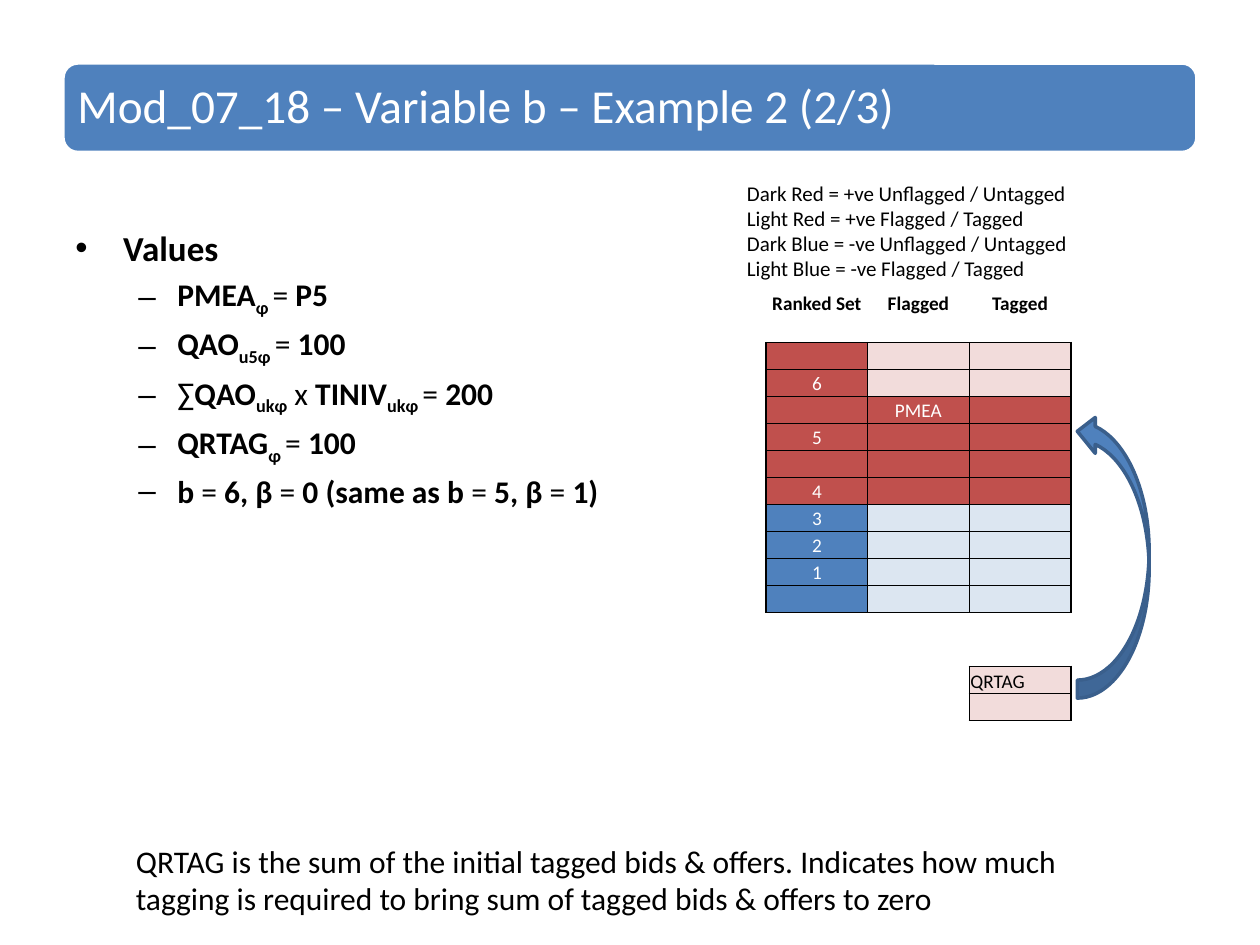
"""Build the slide on variable b, example 2."""
from dataclasses import dataclass
from typing import NamedTuple

from lxml.etree import SubElement
from pptx import Presentation
from pptx.dml.color import RGBColor
from pptx.enum.shapes import MSO_SHAPE
from pptx.enum.text import MSO_ANCHOR, PP_ALIGN
from pptx.oxml.ns import qn
from pptx.util import Inches, Pt

ROUND = MSO_SHAPE.ROUNDED_RECTANGLE
CURVE = MSO_SHAPE.CURVED_RIGHT_ARROW
MIDDLE, BOTTOM = MSO_ANCHOR.MIDDLE, MSO_ANCHOR.BOTTOM
LEFT, CENTER = PP_ALIGN.LEFT, PP_ALIGN.CENTER
PLAIN_STYLE = "{2D5ABB26-0587-4C30-8999-92F81FD0307C}"


@dataclass(frozen=True)
class Theme:
    font: str = "Calibri"
    black: str = "000000"
    white: str = "FFFFFF"
    red: str = "C0504D"
    pink: str = "F2DCDB"
    blue: str = "4F81BD"
    pale: str = "DCE6F1"
    edge: str = "3A5F8C"
    title: int = 27
    head: int = 20
    body: int = 18
    key: int = 12
    cell: int = 11


class Seg(NamedTuple):
    text: str
    bold: bool = True
    sub: bool = False


class Line(NamedTuple):
    mark: str
    size: int
    margin: float
    hang: float
    segs: list[Seg]


class Band(NamedTuple):
    top: int
    end: int
    col: int
    fills: list[str]


class Label(NamedTuple):
    row: int
    col: int
    text: str
    color: str
    bold: bool = False
    align: PP_ALIGN = CENTER
    anchor: MSO_ANCHOR = MIDDLE


T = Theme()
EQUAL = Seg("=", bold=False)
PHI = Seg("φ ", sub=True)


def item(*segs: Seg) -> Line:
    return Line("–", T.body, 0.81, 0.31, list(segs))


LINES = [
    Line("•", T.head, 0.38, 0.38, [Seg("Values")]),
    item(Seg("PMEA"), PHI, EQUAL, Seg(" P5")),
    item(Seg("QAO"), Seg("u5φ ", sub=True), EQUAL, Seg(" 100")),
    item(Seg("∑", bold=False), Seg("QAO"), Seg("ukφ", sub=True), Seg(" x ", bold=False),
         Seg("TINIV"), Seg("ukφ ", sub=True), EQUAL, Seg(" 200")),
    item(Seg("QRTAG"), PHI, EQUAL, Seg(" 100")),
    item(Seg("b "), EQUAL, Seg(" 6, β "), EQUAL, Seg(" 0 (same as b "), EQUAL,
         Seg(" 5, β "), EQUAL, Seg(" 1)")),
]
KEY = """Dark Red = +ve Unflagged / Untagged
Light Red = +ve Flagged / Tagged
Dark Blue = -ve Unflagged / Untagged
Light Blue = -ve Flagged / Tagged"""
NOTE = ("QRTAG is the sum of the initial tagged bids & offers. Indicates how much "
        "tagging is required to bring sum of tagged bids & offers to zero")

REDS, BLUES = [T.red] * 3, [T.blue, T.pale, T.pale]
BANDS = [
    Band(2, 3, 0, [T.red, T.pink, T.pink]),
    Band(4, 5, 0, REDS),
    Band(6, 7, 0, REDS),
    Band(8, 8, 0, BLUES),
    Band(9, 9, 0, BLUES),
    Band(10, 11, 0, BLUES),
    Band(14, 15, 2, [T.pink]),
]
HEADS = ["Ranked Set", "Flagged", "Tagged"]
RANKS = {3: "6", 5: "5", 7: "4", 8: "3", 9: "2", 10: "1"}
LABELS = [
    *(Label(0, col, text, T.black, True, anchor=BOTTOM) for col, text in enumerate(HEADS)),
    *(Label(row, 0, text, T.white) for row, text in RANKS.items()),
    Label(4, 1, "PMEA", T.white),
    Label(14, 2, "QRTAG", T.black, align=LEFT, anchor=BOTTOM),
]
ROWS, COLS = 18, 3


def rgb(code: str) -> RGBColor:
    return RGBColor.from_string(code)


def style(run, size: int, color: str, bold: bool = False) -> None:
    font = run.font
    font.name, font.size, font.bold = T.font, Pt(size), bold
    font.color.rgb = rgb(color)


def add_box(slide, spot: tuple, text: str, size: int):
    frame = slide.shapes.add_textbox(*map(Inches, spot)).text_frame
    frame.word_wrap = True
    frame.text = text
    for para in frame.paragraphs:
        for run in para.runs:
            style(run, size, T.black)
    return frame


def add_form(slide, kind: MSO_SHAPE, spot: tuple, line: str):
    form = slide.shapes.add_shape(kind, *map(Inches, spot))
    form.shadow.inherit = False
    form.fill.solid()
    form.fill.fore_color.rgb = rgb(T.blue)
    form.line.color.rgb = rgb(line)
    form.line.width = Pt(2)
    return form


def add_title(slide) -> None:
    frame = add_form(slide, ROUND, (0.5, 0.5, 9, 0.71), T.white).text_frame
    frame.margin_left = Inches(0.08)
    frame.vertical_anchor = MIDDLE
    frame.text = "Mod_07_18 – Variable b – Example 2 (2/3)"
    para = frame.paragraphs[0]
    para.alignment, para.line_spacing = LEFT, 0.9
    style(para.runs[0], T.title, T.white)


def add_list(slide) -> None:
    frame = add_box(slide, (0.5, 1.75, 5.6, 4.95), "", T.body)
    for num, line in enumerate(LINES):
        para = frame.add_paragraph() if num else frame.paragraphs[0]
        para.space_before = Pt(line.size * 0.2)
        props = para._p.get_or_add_pPr()
        props.set("marL", str(Inches(line.margin)))
        props.set("indent", str(-Inches(line.hang)))
        SubElement(props, qn("a:buFont"), typeface="Arial")
        SubElement(props, qn("a:buChar"), char=line.mark)
        for seg in line.segs:
            run = para.add_run()
            run.text = seg.text
            style(run, line.size, T.black, seg.bold)
            if seg.sub:
                run._r.get_or_add_rPr().set("baseline", "-25000")


def add_edges(cell, sides: str) -> None:
    props = cell._tc.get_or_add_tcPr()
    for spot, side in enumerate(sides):
        line = SubElement(props, qn(f"a:ln{side}"), w=str(Pt(1)))
        fill = SubElement(line, qn("a:solidFill"))
        SubElement(fill, qn("a:srgbClr"), val=T.black)
        props.insert(spot, line)


def add_grid(slide) -> None:
    spot = map(Inches, (6.08, 2.29, 2.42, 3.86))
    table = slide.shapes.add_table(ROWS, COLS, *spot).table
    table.first_row = table.horz_banding = False
    table._tbl.tblPr.find(qn("a:tableStyleId")).text = PLAIN_STYLE
    for cell in table.iter_cells():
        cell.margin_left = cell.margin_right = cell.margin_top = Inches(0.01)
        cell.margin_bottom = 0
        cell.fill.background()
        para = cell.text_frame.paragraphs[0]
        SubElement(para._p, qn("a:endParaRPr"), sz=str(T.cell * 100))
    for band in BANDS:
        for row in range(band.top, band.end + 1):
            for col, color in enumerate(band.fills, band.col):
                cell = table.cell(row, col)
                cell.fill.solid()
                cell.fill.fore_color.rgb = rgb(color)
                add_edges(cell, "LR" + "T" * (row == band.top) + "B" * (row == band.end))
    for label in LABELS:
        cell = table.cell(label.row, label.col)
        cell.vertical_anchor = label.anchor
        para = cell.text_frame.paragraphs[0]
        para.text, para.alignment = label.text, label.align
        style(para.runs[0], T.cell, label.color, label.bold)


def main() -> None:
    deck = Presentation()
    deck.slide_width, deck.slide_height = Inches(10), Inches(7.5)
    slide = deck.slides.add_slide(deck.slide_layouts[6])
    add_list(slide)
    add_grid(slide)
    add_title(slide)
    add_box(slide, (5.83, 1.38, 3.21, 0.91), KEY, T.key)
    add_box(slide, (0.98, 6.63, 7.85, 0.71), NOTE, T.body)
    add_form(slide, CURVE, (8.55, 3.28, 0.57, 2.26), T.edge).rotation = 180
    deck.save("out.pptx")


if __name__ == "__main__":
    main()
